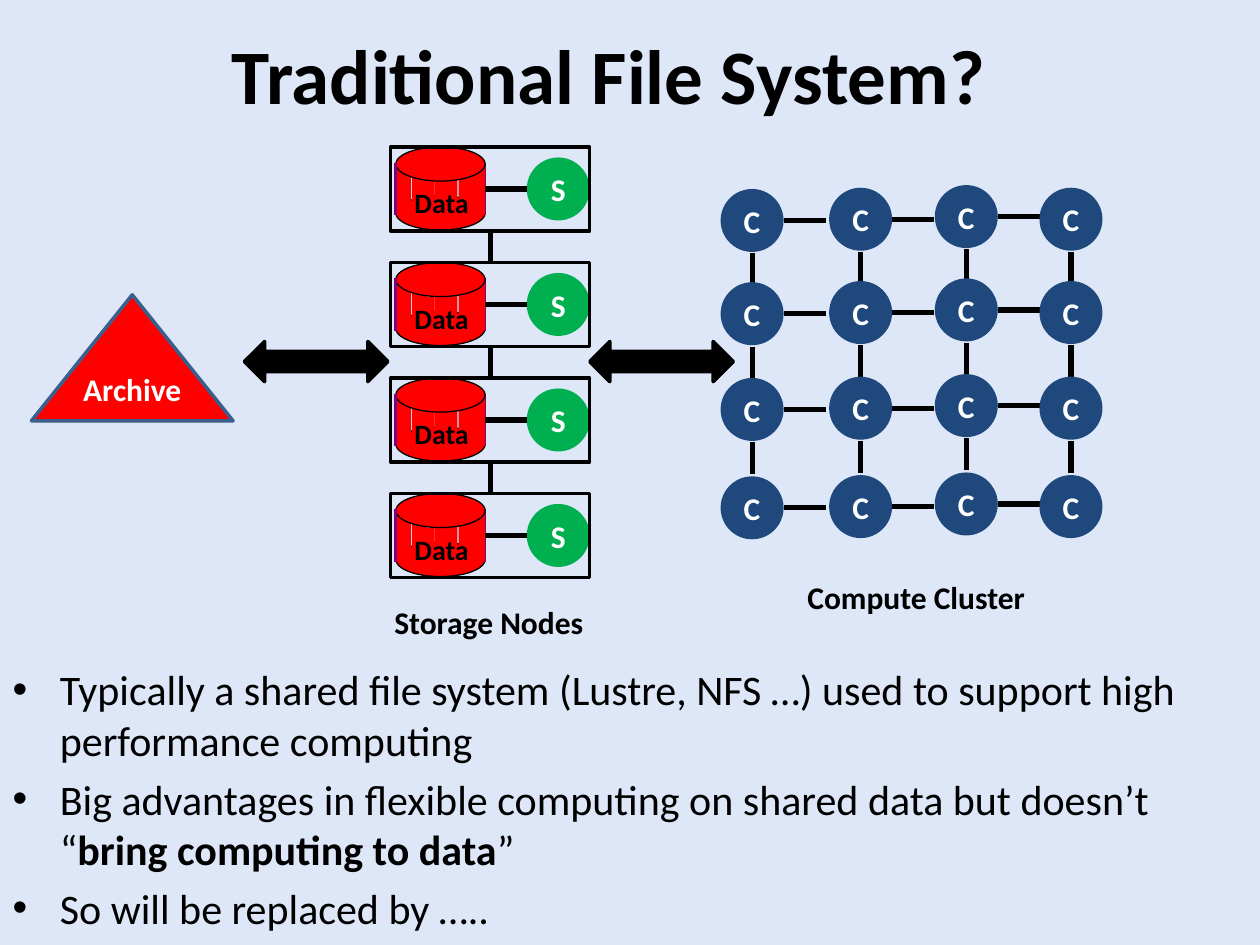
from lxml import etree
from pptx import Presentation, util as u
from pptx.dml.color import RGBColor
from pptx.enum import shapes, text
from pptx.oxml import ns

BACKGROUND = RGBColor(0xDE, 0xE7, 0xF8)
BLACK = RGBColor(0, 0, 0)
WHITE = RGBColor(0xFF, 0xFF, 0xFF)
RED = RGBColor(0xFF, 0, 0)
GREEN = RGBColor(0, 0xB0, 0x50)
NAVY = RGBColor(0x1F, 0x49, 0x7D)
PURPLE = RGBColor(0x80, 0, 0x80)
STEEL = RGBColor(0x3A, 0x5F, 0x8C)

KIND = shapes.MSO_SHAPE
CENTER = text.PP_ALIGN.CENTER
CIRCLE = 36

NODE_LEFT, NODE_TOP, NODE_PITCH = 223.2, 84, 66
NODE_WIDTH, NODE_HEIGHT = 113.8, 48
CYLINDER_STRIPS = [
    (25.2, 19.5, 6.5, 26), (31.7, 17.3, 6.5, 28), (16.6, 19.5, 8.6, 23.8),
    (3, 10.8, 8.6, 28), (12.2, 15.1, 8.6, 28), (38.9, 15.1, 6.5, 28),
    (45.4, 13, 6.5, 28), (47.5, 10.8, 6.5, 28),
]

COLUMNS = [(411.8, 108), (473.8, 107.3), (534.2, 105.8), (594, 107.3)]
ROW_OFFSETS = [0, 53.3, 108, 164.2]

BULLETS = [
    [("Typically a shared file system (Lustre, NFS …) used to support high "
      "performance computing", False)],
    [("Big advantages in flexible computing on shared data but doesn’t “", False),
     ("bring computing to data", True), ("”", False)],
    [("So will be replaced by …..", False)],
]


def apply_format(target, values):
    for name, value in values.items():
        setattr(target, name, value)


def set_font(font, size, color, bold=True):
    apply_format(font, {"name": "Calibri", "size": u.Pt(size), "bold": bold})
    font.color.rgb = color


def place(shape, left, top, width, height):
    box = {"left": left, "top": top, "width": width, "height": height}
    apply_format(shape, {name: u.Pt(value) for name, value in box.items()})


def add_label(shape, words, size=18, color=WHITE):
    frame = shape.text_frame
    apply_format(frame, {
        "margin_left": 0, "margin_right": 0, "margin_top": 0, "margin_bottom": 0,
        "word_wrap": True, "vertical_anchor": text.MSO_ANCHOR.MIDDLE,
    })
    paragraph = frame.paragraphs[0]
    apply_format(paragraph, {"text": words, "alignment": CENTER})
    set_font(paragraph.font, size, color)


def add_figure(container, kind, box, fill=None, line=None, weight=2.0):
    shape = container.add_shape(kind, *map(u.Pt, box))
    shape.shadow.inherit = False
    if fill is None:
        shape.fill.background()
    else:
        shape.fill.solid()
        shape.fill.fore_color.rgb = fill
    if line is None:
        shape.line.fill.background()
    else:
        shape.line.color.rgb = line
        shape.line.width = u.Pt(weight)
    return shape


def add_line(container, x1, y1, x2, y2, color=BLACK, weight=3.0):
    line = container.add_connector(
        shapes.MSO_CONNECTOR.STRAIGHT, *map(u.Pt, (x1, y1, x2, y2)))
    line.line.color.rgb = color
    line.line.width = u.Pt(weight)
    properties = line._element.find(ns.qn("p:spPr"))
    etree.SubElement(properties, ns.qn("a:effectLst"))


def add_circle(container, left, top, letter, fill):
    circle = add_figure(container, KIND.OVAL, (left, top, CIRCLE, CIRCLE), fill)
    add_label(circle, letter)


def add_caption(container, words, left, top, width):
    caption = container.add_textbox(*map(u.Pt, (left, top, width, 29)))
    caption.text_frame.word_wrap = False
    paragraph = caption.text_frame.paragraphs[0]
    paragraph.text = words
    set_font(paragraph.font, 18, BLACK)


def add_cylinder(container, left, top):
    add_figure(container, KIND.OVAL, (left + 3, top + 28, 51, 19.5), RED, BLACK, 0.75)
    add_line(container, left + 54, top + 9, left + 54, top + 39, PURPLE, 1.5)
    add_line(container, left + 31.7, top + 19.5, left + 31.7, top + 28, PURPLE, 1.5)
    for x, y, width, height in CYLINDER_STRIPS:
        add_figure(container, KIND.RECTANGLE, (left + x, top + y, width, height), RED)
    add_figure(container, KIND.OVAL, (left + 3, top, 51, 19.5), RED, BLACK, 0.75)
    add_line(container, left + 3, top + 9, left + 3, top + 39, PURPLE, 1.5)
    data = container.add_textbox(*map(u.Pt, (left, top + 18.4, 58.3, 26.6)))
    add_label(data, "Data", 16, BLACK)


def add_storage_node(slide, left, top):
    container = slide.shapes.add_group_shape().shapes
    add_circle(container, left + 77.8, top + 6, "S", GREEN)
    add_cylinder(container, left, top)
    add_line(container, left + 54, top + 24, left + 77.8, top + 24)
    add_figure(container, KIND.RECTANGLE, (left, top, NODE_WIDTH, NODE_HEIGHT), line=BLACK)


def add_storage(slide):
    middle = NODE_LEFT + NODE_WIDTH / 2
    for index in range(4):
        top = NODE_TOP + index * NODE_PITCH
        add_storage_node(slide, NODE_LEFT, top)
        if index < 3:
            add_line(slide.shapes, middle, top + NODE_HEIGHT, middle, top + NODE_PITCH)
    add_caption(slide.shapes, "Storage Nodes", 218.2, 341.3, 123)


def add_cluster(slide):
    container = slide.shapes.add_group_shape().shapes
    add_caption(container, "Compute Cluster", 454.3, 326.9, 139.7)
    for left, column_top in COLUMNS:
        for offset in ROW_OFFSETS:
            top = column_top + offset
            add_circle(container, left, top, "C", NAVY)
            if left != COLUMNS[-1][0]:
                add_line(container, left + 36, top + 18, left + 60.2, top + 18)
            if offset != ROW_OFFSETS[-1]:
                add_line(container, left + 18, top + 36.7, left + 18, top + 54.7)


def add_title(slide):
    title = slide.shapes.title
    place(title, 24, 12.2, 648, 60)
    apply_format(title.text_frame, {
        "text": "Traditional File System?", "auto_size": text.MSO_AUTO_SIZE.NONE,
        "vertical_anchor": text.MSO_ANCHOR.MIDDLE})
    paragraph = title.text_frame.paragraphs[0]
    paragraph.alignment = CENTER
    set_font(paragraph.font, 44, BLACK)


def add_bullets(slide):
    body = slide.placeholders[1]
    place(body, 0, 375.8, 714, 115)
    frame = body.text_frame
    frame.auto_size = text.MSO_AUTO_SIZE.NONE
    for index, pieces in enumerate(BULLETS):
        paragraph = frame.add_paragraph() if index else frame.paragraphs[0]
        paragraph.space_before = u.Pt(4.8 if index else 0)
        for words, bold in pieces:
            run = paragraph.add_run()
            run.text = words
            set_font(run.font, 24, BLACK, bold)


def main():
    presentation = Presentation()
    apply_format(presentation, {"slide_width": u.Pt(720), "slide_height": u.Pt(540)})
    slide = presentation.slides.add_slide(presentation.slide_layouts[1])
    slide.background.fill.solid()
    slide.background.fill.fore_color.rgb = BACKGROUND
    add_title(slide)
    add_bullets(slide)
    add_storage(slide)
    add_cluster(slide)
    for left in (337, 139.7):
        add_figure(slide.shapes, KIND.LEFT_RIGHT_ARROW, (left, 195.1, 82, 23), BLACK, BLACK)
    archive = add_figure(
        slide.shapes, KIND.ISOSCELES_TRIANGLE, (18, 168.5, 115.2, 72), RED, STEEL)
    add_label(archive, "Archive")
    presentation.save("out.pptx")


if __name__ == "__main__":
    main()
